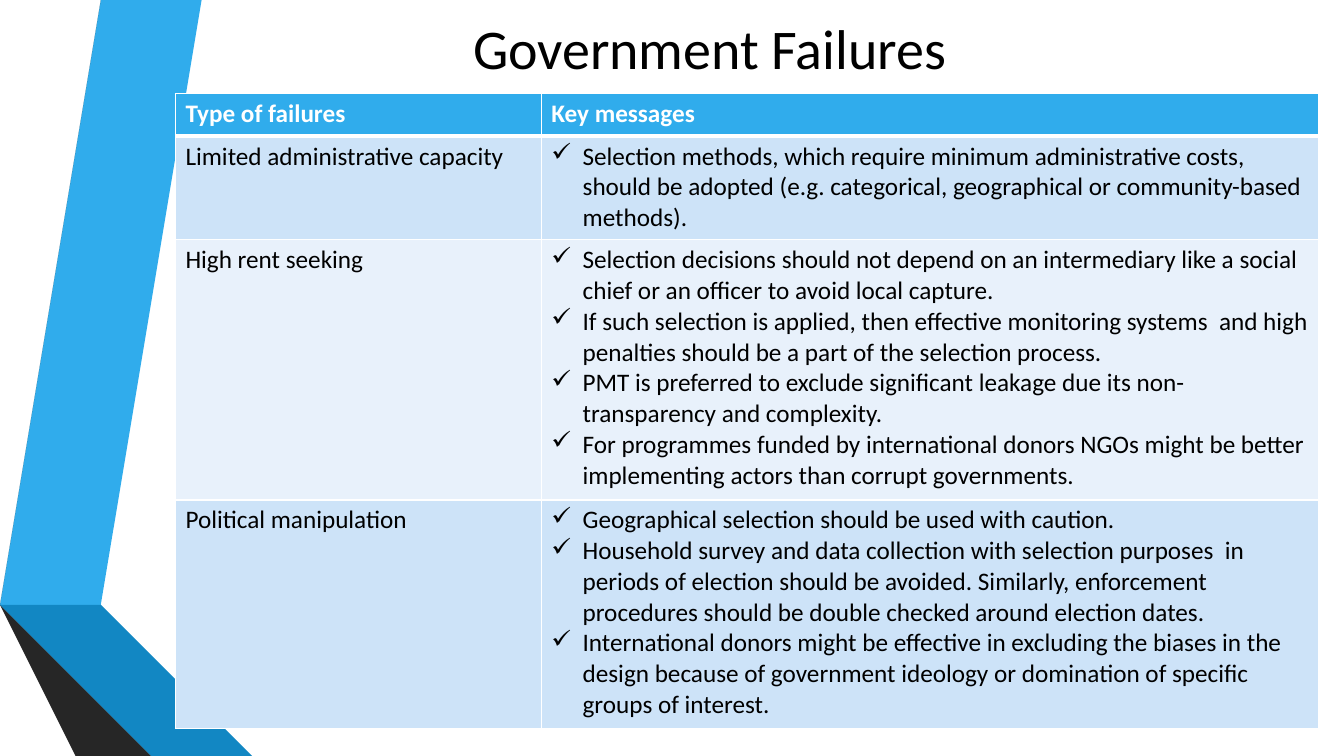
import pptx
import pptx.dml.color
import pptx.enum.text
import pptx.oxml
import pptx.oxml.ns
import pptx.util

Inches, Pt = pptx.util.Inches, pptx.util.Pt
FONT = "Calibri"
WHITE, BLACK, SKY = "FFFFFF", "000000", "30ACEC"
BANDS = ["CDE3F8", "E8F1FB"]
SLIDE_W, SLIDE_H = 13.33, 7.5

# Outlines in inches from the corner of the ribbon box, back to front
RIBBONS = [
    (SKY, [(0.5, 5.78), (0.77, 5.83), (1.73, 0), (1.45, 0)]),
    ("595959", [(1.39, 0), (1.11, 0), (0.16, 5.73), (0.44, 5.77)]),
    ("262626", [(0.16, 5.73), (1.45, 7.5), (1.51, 7.5)]),
    ("0C5A82", [(0.5, 5.79), (2.08, 7.5), (2.14, 7.5)]),
    ("1287C3", [(0.5, 5.79), (2.14, 7.5), (2.83, 7.5), (0.77, 5.83), (0.5, 5.78)]),
    ("404040", [(2.02, 7.5), (0.48, 5.83), (0.43, 5.78), (0.44, 5.77),
                (0.16, 5.73), (1.51, 7.5)]),
]

HEADINGS = ["Type of failures", "Key messages"]
FAILURES = [
    ("Limited administrative capacity", [
        "Selection methods, which require minimum administrative costs, should be "
        "adopted (e.g. categorical, geographical or community-based methods).",
    ]),
    ("High rent seeking", [
        "Selection decisions should not depend on an intermediary like a social "
        "chief or an officer to avoid local capture.",
        "If such selection is applied, then effective monitoring systems  and high "
        "penalties should be a part of the selection process.",
        "PMT is preferred to exclude significant leakage due its non-transparency "
        "and complexity.",
        "For programmes funded by international donors NGOs might be better "
        "implementing actors than corrupt governments.",
    ]),
    ("Political manipulation", [
        "Geographical selection should be used with caution.",
        "Household survey and data collection with selection purposes  in periods "
        "of election should be avoided. Similarly, enforcement procedures should "
        "be double checked around election dates.",
        "International donors might be effective in excluding the biases in the "
        "design because of government ideology or domination of specific groups "
        "of interest.",
    ]),
]
COLUMN_SHARES = [0.32, 0.68]
ROW_HEIGHTS = [0.42, 1.03, 2.58, 2.27]


def rgb(value):
    return pptx.dml.color.RGBColor.from_string(value)


def style_font(font, size, color, bold=False):
    font.name, font.size, font.bold = FONT, Pt(size), bold
    font.color.rgb = rgb(color)


def add_ribbons(slide, left, top):
    for color, outline in RIBBONS:
        start, *rest = [(left + x, top + y) for x, y in outline]
        builder = slide.shapes.build_freeform(*start, scale=Inches(1))
        builder.add_line_segments(rest, close=True)
        ribbon = builder.convert_to_shape()
        ribbon.shadow.inherit = False
        ribbon.fill.solid()
        ribbon.fill.fore_color.rgb = rgb(color)
        ribbon.line.fill.background()


def fill_title(slide, left, top, width, height):
    title = slide.shapes.title
    title.left, title.top = Inches(left), Inches(top)
    title.width, title.height = Inches(width), Inches(height)
    title.text_frame.text = "Government Failures"
    title.text_frame.vertical_anchor = pptx.enum.text.MSO_ANCHOR.MIDDLE
    heading = title.text_frame.paragraphs[0]
    heading.alignment = pptx.enum.text.PP_ALIGN.CENTER
    style_font(heading.runs[0].font, 40, BLACK)


def add_check_mark(paragraph):
    properties = paragraph._p.get_or_add_pPr()
    properties.set("marL", str(Inches(0.31)))
    properties.set("indent", str(-Inches(0.31)))
    properties.append(pptx.oxml.parse_xml(
        f'<a:buChar {pptx.oxml.ns.nsdecls("a")} char="✓"/>'))


def set_borders(cell, top=1, bottom=1):
    """Draw white cell borders, with widths in points."""
    properties = cell._tc.get_or_add_tcPr()
    widths = {"lnL": 1, "lnR": 1, "lnT": top, "lnB": bottom}
    for place, (tag, width) in enumerate(widths.items()):
        properties.insert(place, pptx.oxml.parse_xml(
            f'<a:{tag} {pptx.oxml.ns.nsdecls("a")} w="{Pt(width)}"><a:solidFill>'
            f'<a:srgbClr val="{WHITE}"/></a:solidFill></a:{tag}>'))


def fill_cell(cell, lines, fill, color=BLACK, bold=False, checked=False):
    cell.fill.solid()
    cell.fill.fore_color.rgb = rgb(fill)
    cell.text_frame.text = "\n".join(lines)
    for paragraph in cell.text_frame.paragraphs:
        if checked:
            add_check_mark(paragraph)
        style_font(paragraph.runs[0].font, 18, color, bold)


def add_failure_table(slide, left, top, width):
    table = slide.shapes.add_table(
        len(ROW_HEIGHTS), len(COLUMN_SHARES), Inches(left), Inches(top),
        Inches(width), Inches(sum(ROW_HEIGHTS))).table
    for column, share in zip(table.columns, COLUMN_SHARES):
        column.width = Inches(width * share)
    for row, height in zip(table.rows, ROW_HEIGHTS):
        row.height = Inches(height)

    for column, heading in enumerate(HEADINGS):
        cell = table.cell(0, column)
        fill_cell(cell, [heading], SKY, WHITE, bold=True)
        set_borders(cell, bottom=3)
    for row, (failure, messages) in enumerate(FAILURES, start=1):
        band = BANDS[(row - 1) % 2]
        fill_cell(table.cell(row, 0), [failure], band)
        fill_cell(table.cell(row, 1), messages, band, checked=True)
        for cell in table.rows[row].cells:
            set_borders(cell, top=3 if row == 1 else 1)


def main():
    deck = pptx.Presentation()
    deck.slide_width, deck.slide_height = Inches(SLIDE_W), Inches(SLIDE_H)
    slide = deck.slides.add_slide(deck.slide_layouts.get_by_name("Title Only"))
    add_ribbons(slide, 0, 0)
    fill_title(slide, 1.56, 0, 10.96, 0.93)
    add_failure_table(slide, 1.74, 0.93, 11.34)
    deck.save("out.pptx")


if __name__ == "__main__":
    main()
